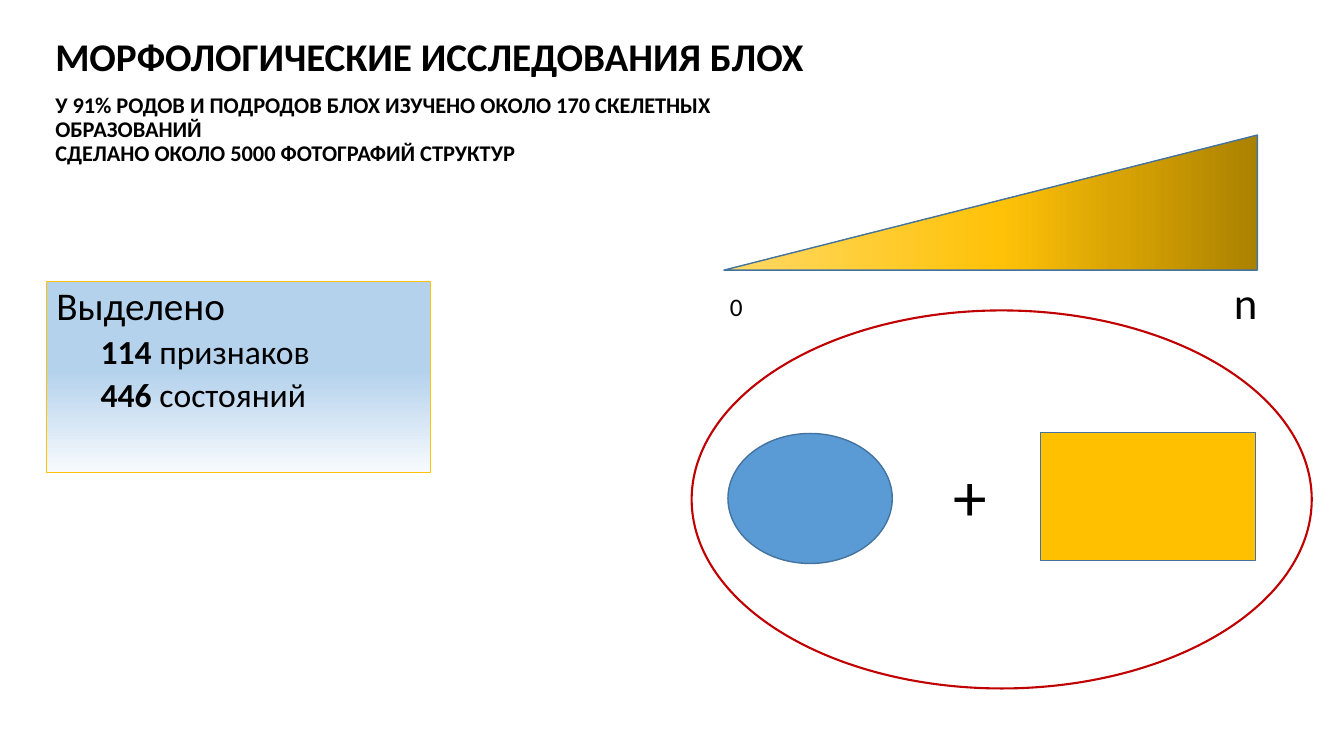
from lxml.etree import SubElement
from pptx import Presentation
from pptx.dml.color import RGBColor
from pptx.enum.shapes import MSO_SHAPE
from pptx.enum.text import MSO_ANCHOR, PP_ALIGN
from pptx.oxml.ns import qn
from pptx.util import Pt

BLACK = RGBColor(0x00, 0x00, 0x00)
RED = RGBColor(0xC0, 0x00, 0x00)
NAVY = RGBColor(0x43, 0x73, 0x9E)
BLUE = RGBColor(0x5B, 0x9B, 0xD5)
SKY = RGBColor(0xB5, 0xD2, 0xEC)
PALE = RGBColor(0xF7, 0xFA, 0xFD)
GOLD = RGBColor(0xFF, 0xC0, 0x00)
AMBER = RGBColor(0xFF, 0xC2, 0x08)
BROWN = RGBColor(0xAB, 0x81, 0x00)
OCHRE = RGBColor(0xDA, 0xA5, 0x04)
SAND = RGBColor(0xFF, 0xD9, 0x66)


class Board:
    """Style and current slide; lengths are px, 100 to the inch."""
    scale = 9144
    font = "Calibri"

    def __init__(self, deck):
        deck.slide_width, deck.slide_height = self.emu(1333, 750)
        self.slide = deck.slides.add_slide(deck.slide_layouts[6])

    def emu(self, *sizes):
        return [size * self.scale for size in sizes]

    def shape(self, kind, box, line, width=1, fill=None):
        item = self.slide.shapes.add_shape(kind, *self.emu(*box))
        item.shadow.inherit = False
        item.line.color.rgb = line
        item.line.width = Pt(width)
        if fill is None:
            item.fill.background()
        else:
            item.fill.solid()
            item.fill.fore_color.rgb = fill
        return item

    def shade(self, item, angle, stops):
        item.fill.gradient()
        item.fill.gradient_angle = -angle % 360
        grad = item._element.spPr.find(qn("a:gradFill"))
        group = grad.find(qn("a:gsLst"))
        for old in list(group):
            group.remove(old)
        for place, color in stops:
            stop = SubElement(group, qn("a:gs"), pos=str(place * 1000))
            SubElement(stop, qn("a:srgbClr"), val=str(color))

    def label(self, box, rows, **frame):
        item = self.slide.shapes.add_textbox(*self.emu(*box))
        self.letter(item, rows, **frame)

    def letter(self, item, rows, **frame):
        """Each row is (runs, size, format, indent); a run is (text, bold)."""
        text = item.text_frame
        style = {"word_wrap": True, "vertical_anchor": MSO_ANCHOR.TOP, **frame}
        for name, value in style.items():
            setattr(text, name, value)
        for spot, (runs, size, form, indent) in enumerate(rows):
            para = text.add_paragraph() if spot else text.paragraphs[0]
            for name, value in {"alignment": PP_ALIGN.LEFT, **form}.items():
                setattr(para, name, value)
            if indent:
                para._p.get_or_add_pPr().set("marL", str(indent * self.scale))
            for words, bold in runs:
                run = para.add_run()
                run.text = words
                look = {"name": self.font, "size": Pt(size), "bold": bold}
                for name, value in look.items():
                    setattr(run.font, name, value)
                run.font.color.rgb = BLACK


def main():
    deck = Presentation()
    board = Board(deck)
    tight = {"line_spacing": 0.9}

    # Large ring
    board.shape(MSO_SHAPE.OVAL, (686, 308, 615, 375), RED, 1.5)

    # Panel with counts
    panel = board.shape(MSO_SHAPE.RECTANGLE, (46, 279, 381, 190), AMBER, 0.75, SKY)
    board.shade(panel, 90, [(14, SKY), (47, SKY), (100, PALE)])
    rows = [([("Выделено", False)], 28, tight, 0)]
    for count, noun in (("114", " признаков"), ("446", " состояний")):
        form = {**tight, "space_before": Pt(5)}
        rows.append(([(count, True), (noun, False)], 24, form, 44))
    board.letter(panel, rows)

    # Heading
    board.label((45, 25, 817, 152), [
        ([("МОРФОЛОГИЧЕСКИЕ ИССЛЕДОВАНИЯ БЛОХ", True)], 28, tight, 0),
        ([("У 91% РОДОВ И ПОДРОДОВ БЛОХ ИЗУЧЕНО ОКОЛО 170 СКЕЛЕТНЫХ ОБРАЗОВАНИЙ", True)],
         16, {**tight, "space_before": Pt(10)}, 0),
        ([("СДЕЛАНО ОКОЛО 5000 ФОТОГРАФИЙ СТРУКТУР", True)], 16, tight, 0),
    ], vertical_anchor=MSO_ANCHOR.MIDDLE)

    # Rising wedge, from 0 to n
    wedge = board.shape(MSO_SHAPE.ISOSCELES_TRIANGLE, (718, 134, 529, 134), NAVY, 1, AMBER)
    wedge.adjustments[0] = 1
    board.shade(wedge, 180, [(0, BROWN), (27, OCHRE), (48, AMBER), (100, SAND)])
    board.label((714, 284, 56, 40), [([("0", False)], 18, {}, 0)])
    board.label((1214, 268, 75, 64), [([("n", False)], 32, {}, 0)])

    # Oval plus box
    board.shape(MSO_SHAPE.OVAL, (722, 430, 163, 129), NAVY, 1, BLUE)
    board.label((892, 446, 141, 91), [([("+", False)], 48, {"alignment": PP_ALIGN.CENTER}, 0)])
    board.shape(MSO_SHAPE.RECTANGLE, (1032, 429, 213, 127), NAVY, 1, GOLD)

    deck.save("out.pptx")


if __name__ == "__main__":
    main()
